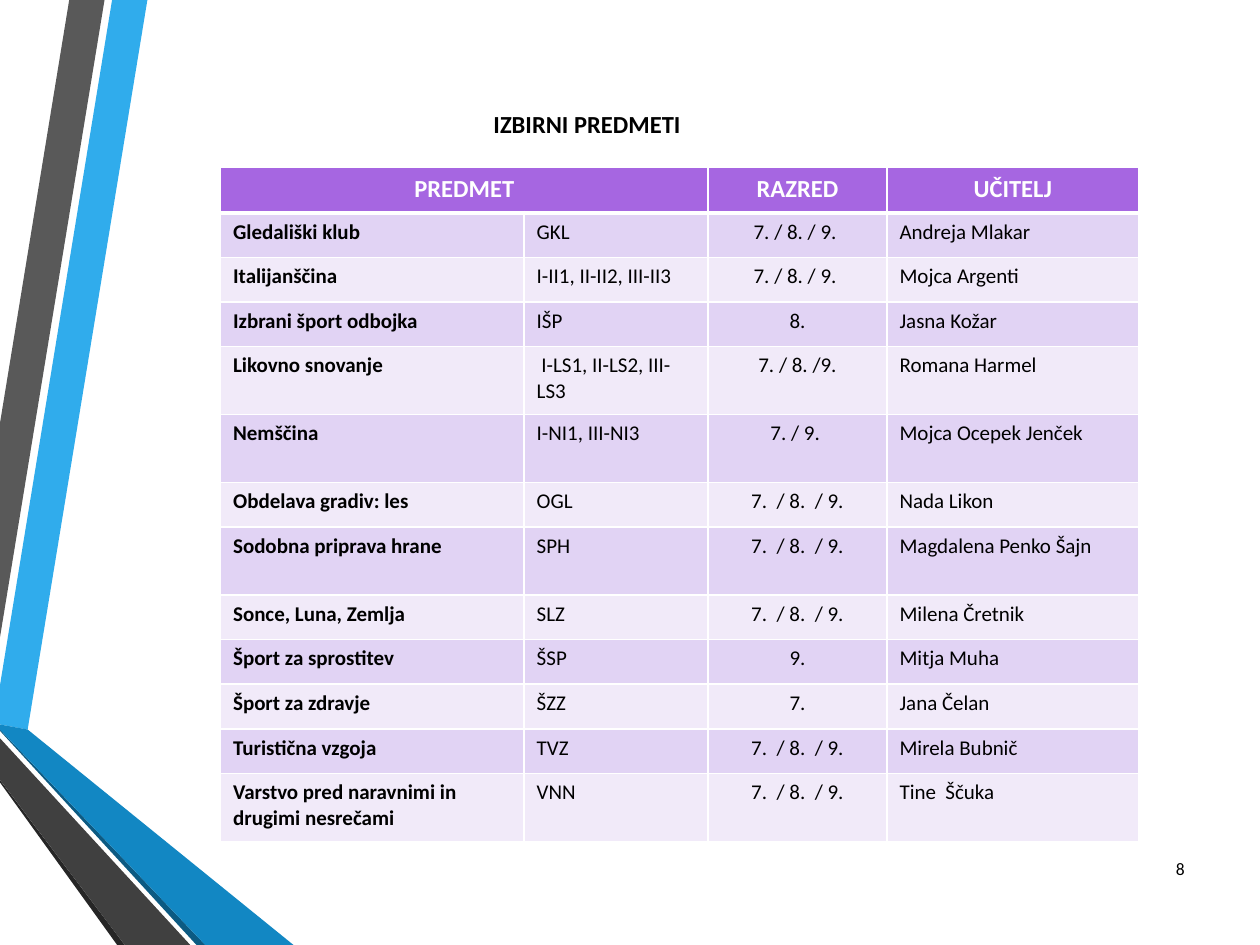
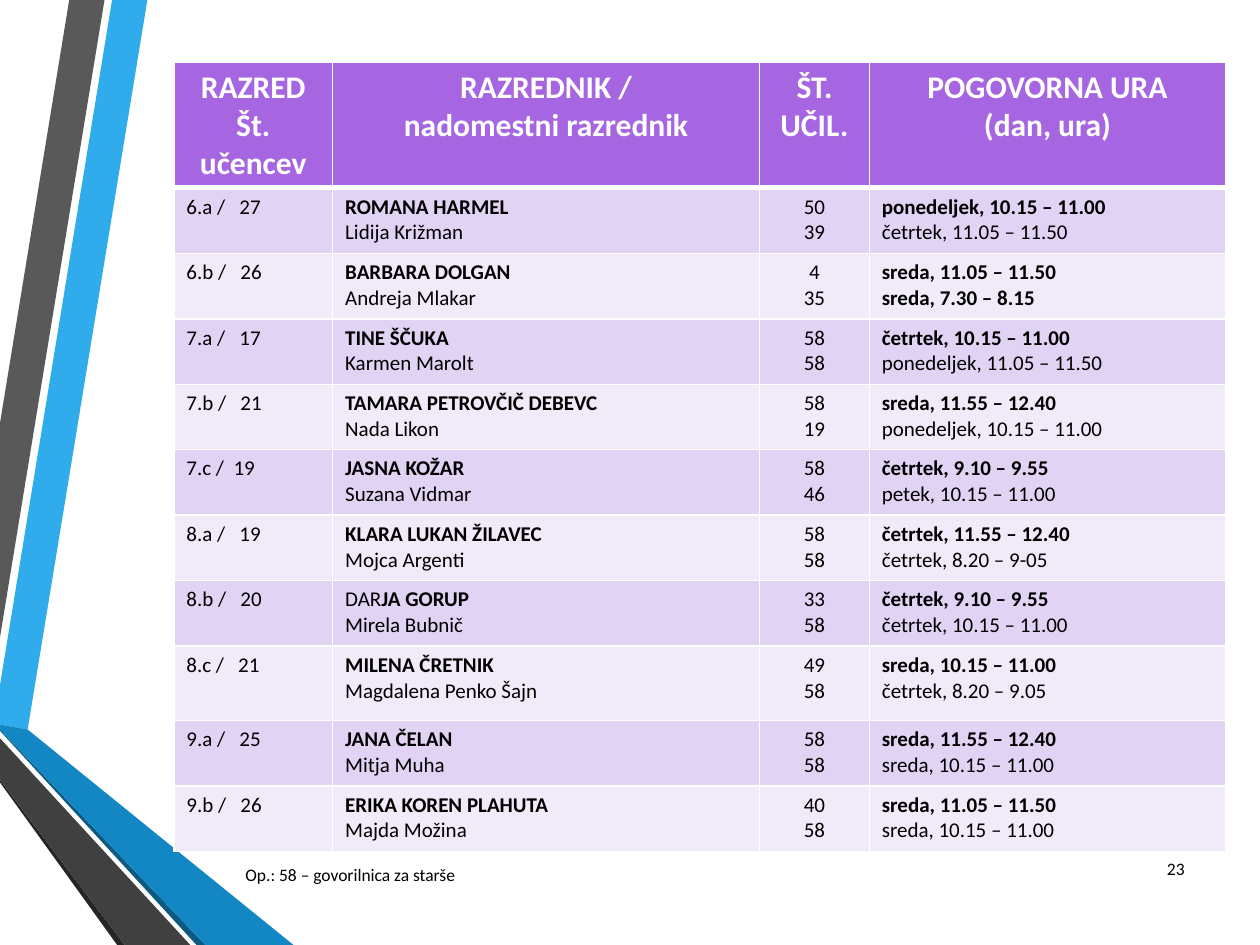
from lxml import etree
from pptx import Presentation
from pptx.dml.color import RGBColor
from pptx.enum.text import MSO_ANCHOR, PP_ALIGN
from pptx.oxml.ns import qn
from pptx.util import Inches, Pt

LEFT, CENTER, RIGHT, JUSTIFY = PP_ALIGN.LEFT, PP_ALIGN.CENTER, PP_ALIGN.RIGHT, PP_ALIGN.JUSTIFY
TOP, MIDDLE = MSO_ANCHOR.TOP, MSO_ANCHOR.MIDDLE

BLACK = RGBColor(0x00, 0x00, 0x00)
WHITE = RGBColor(0xFF, 0xFF, 0xFF)
PURPLE = RGBColor(0xA6, 0x66, 0xE1)
LILAC = RGBColor(0xE1, 0xD3, 0xF4)
PALE_LILAC = RGBColor(0xF1, 0xEA, 0xF9)
SKY = RGBColor(0x30, 0xAC, 0xEC)
BLUE = RGBColor(0x12, 0x87, 0xC3)
DEEP_BLUE = RGBColor(0x0C, 0x5A, 0x82)
GRAY = RGBColor(0x59, 0x59, 0x59)
DARK_GRAY = RGBColor(0x40, 0x40, 0x40)
CHARCOAL = RGBColor(0x26, 0x26, 0x26)

BANDS = [
    (SKY, [(0, 5.44), (0, 5.75), (0.22, 5.79), (1.17, 0), (0.89, 0)]),
    (GRAY, [(0.83, 0), (0.55, 0), (0, 3.36), (0, 5.06)]),
    (CHARCOAL, [(0, 6.19), (0, 6.21), (0.93, 7.5), (0.99, 7.5)]),
    (DEEP_BLUE, [(0, 5.79), (0, 5.8), (1.56, 7.5), (1.63, 7.5)]),
    (BLUE, [(0, 5.79), (1.63, 7.5), (2.33, 7.5), (0.22, 5.79), (0, 5.75)]),
    (DARK_GRAY, [(0, 6.19), (0.99, 7.5), (1.51, 7.5), (0, 5.86)]),
]

SUBJECTS = [
    ("PREDMET", "", "RAZRED", "UČITELJ"),
    ("*Gledališki klub*", "GKL", "7. / 8. / 9. ", "Andreja Mlakar"),
    ("*Italijanščina*", "I-II1, II-II2, III-II3", "7. / 8. / 9. ", "Mojca Argenti"),
    ("*Izbrani šport odbojka*", "IŠP", "8.", "Jasna Kožar"),
    ("*Likovno snovanje*", " I-LS1, II-LS2, III-LS3", "7. / 8. /9.", "Romana Harmel"),
    ("*Nemščina*", "I-NI1, III-NI3", "7. / 9. ", "Mojca Ocepek Jenček"),
    ("*Obdelava gradiv: les*", "OGL", "7.  / 8.  / 9.", "Nada Likon"),
    ("*Sodobna priprava hrane*", "SPH", "7.  / 8.  / 9.", "Magdalena Penko Šajn"),
    ("*Sonce, Luna, Zemlja*", "SLZ", "7.  / 8.  / 9.", "Milena Čretnik"),
    ("*Šport za sprostitev*", "ŠSP", "9.", "Mitja Muha"),
    ("*Šport za zdravje*", "ŠZZ", "7.", "Jana Čelan"),
    ("*Turistična vzgoja*", "TVZ", "7.  / 8.  / 9.", "Mirela Bubnič"),
    ("*Varstvo pred naravnimi in drugimi nesrečami*", "VNN", "7.  / 8.  / 9.", "Tine  Ščuka"),
]

OFFICE_HOURS = [
    ("RAZRED\nŠt. učencev", "RAZREDNIK /\nnadomestni razrednik", "ŠT. UČIL.",
     "POGOVORNA URA\n(dan, ura)"),
    ("6.a /   27", "*ROMANA HARMEL*\nLidija Križman", "50\n39",
     "*ponedeljek, 10.15 – 11.00*\nčetrtek, 11.05 – 11.50"),
    ("6.b /   26", "*BARBARA DOLGAN*\nAndreja Mlakar", "4\n35",
     "*sreda, 11.05 – 11.50*\n*sreda, 7.30 – 8.15*"),
    ("7.a /   17", "*TINE ŠČUKA*\nKarmen Marolt", "58\n58",
     "*četrtek, 10.15 – 11.00*\nponedeljek, 11.05 – 11.50"),
    ("7.b /   21", "*TAMARA PETROVČIČ DEBEVC*\nNada Likon", "58\n19",
     "*sreda, 11.55 – 12.40*\nponedeljek, 10.15 – 11.00"),
    ("7.c /  19", "*JASNA KOŽAR*\nSuzana Vidmar", "58\n46",
     "*četrtek, 9.10 – 9.55*\npetek, 10.15 – 11.00"),
    ("8.a /   19", "*KLARA LUKAN ŽILAVEC*\nMojca Argenti", "58\n58",
     "*četrtek, 11.55 – 12.40*\nčetrtek, 8.20 – 9-05"),
    ("8.b /   20", "DAR*JA GORUP*\nMirela Bubnič", "33\n58",
     "*četrtek, 9.10 – 9.55*\nčetrtek, 10.15 – 11.00"),
    ("8.c /   21", "*MILENA ČRETNIK*\nMagdalena Penko Šajn", "49\n58",
     "*sreda, 10.15 – 11.00*\nčetrtek, 8.20 – 9.05"),
    ("9.a /   25", "*JANA ČELAN*\nMitja Muha", "58\n58",
     "*sreda, 11.55 – 12.40*\nsreda, 10.15 – 11.00"),
    ("9.b /   26", "*ERIKA KOREN PLAHUTA*\nMajda Možina", "40\n58",
     "*sreda, 11.05 – 11.50*\nsreda, 10.15 – 11.00"),
]


class SchoolDeck:
    font_name = "Calibri"
    title_only, blank = 5, 6

    def __init__(self):
        self.deck = Presentation()
        self.deck.slide_width, self.deck.slide_height = Inches(10), Inches(7.5)
        self.page = None

    def add_page(self, layout):
        self.page = self.deck.slides.add_slide(self.deck.slide_layouts[layout])

    def add_master_bands(self):
        master_tree = self.deck.slide_master.shapes.element
        for number, (color, points) in enumerate(BANDS, 101):
            corners = [(Inches(x), Inches(y)) for x, y in points]
            builder = self.page.shapes.build_freeform(*corners[0])
            builder.add_line_segments(corners[1:], close=True)
            band = builder.convert_to_shape()
            band.shadow.inherit = False
            band.fill.solid()
            band.fill.fore_color.rgb = color
            band.line.fill.background()
            band.element.nvSpPr.cNvPr.set("id", str(number))
            master_tree.append(band.element)

    def fill_text(self, frame, text, size, color=BLACK, bold=False, **para_format):
        for index, line in enumerate(text.split("\n")):
            para = frame.add_paragraph() if index else frame.paragraphs[0]
            for name, value in para_format.items():
                setattr(para, name, value)
            for position, part in enumerate(line.split("*")):
                if part:
                    span = para.add_run()
                    span.text = part
                    span_format = {"name": self.font_name, "size": Pt(size),
                                   "bold": bold or position % 2 == 1}
                    for name, value in span_format.items():
                        setattr(span.font, name, value)
                    span.font.color.rgb = color

    def add_text(self, box, area, text, size, anchor=TOP, **text_format):
        for name, value in zip(("left", "top", "width", "height"), area):
            setattr(box, name, Inches(value))
        frame_format = {"word_wrap": True, "vertical_anchor": anchor}
        for name, value in frame_format.items():
            setattr(box.text_frame, name, value)
        self.fill_text(box.text_frame, text, size, **text_format)

    def add_title(self, area, text):
        self.add_text(self.page.shapes.title, area, text, 14, bold=True,
                      alignment=CENTER, line_spacing=0.9)

    def add_note(self, area, text, **text_format):
        box = self.page.shapes.add_textbox(0, 0, 0, 0)
        self.add_text(box, area, text, 10, **text_format)

    def add_page_number(self, number):
        self.add_note((9.05, 6.69, 0.45, 0.4), str(number), anchor=MIDDLE, alignment=RIGHT)

    def set_borders(self, cell, top, bottom):
        properties = cell._tc.get_or_add_tcPr()
        widths = {"a:lnL": 1, "a:lnR": 1, "a:lnT": top, "a:lnB": bottom}
        for index, (tag, width) in enumerate(widths.items()):
            line = etree.Element(qn(tag), w=str(Pt(width)))
            fill = etree.SubElement(line, qn("a:solidFill"))
            etree.SubElement(fill, qn("a:srgbClr"), val=str(WHITE))
            properties.insert(index, line)

    def add_table(self, area, columns, special_rows, rows, header_size, merged=()):
        frame = self.page.shapes.add_table(len(rows), len(columns), *map(Inches, area))
        table = frame.table
        for column, width in zip(table.columns, columns):
            column.width = Inches(width)
        plain_height = (area[3] - sum(special_rows.values())) / (len(rows) - len(special_rows))
        for row_index, values in enumerate(rows):
            header = row_index == 0
            table.rows[row_index].height = Inches(special_rows.get(row_index, plain_height))
            for column_index, text in enumerate(values):
                cell = table.cell(row_index, column_index)
                cell.fill.solid()
                cell.fill.fore_color.rgb = PURPLE if header else LILAC if row_index % 2 else PALE_LILAC
                self.set_borders(cell, 3 if row_index == 1 else 1, 3 if header else 1)
                self.fill_text(cell.text_frame, text, header_size if header else 12,
                               WHITE if header else BLACK, header,
                               alignment=CENTER if header or column_index == 2 else LEFT)
        if merged:
            table.cell(0, merged[0]).merge(table.cell(0, merged[1]))


def main():
    school = SchoolDeck()

    school.add_page(school.title_only)
    school.add_master_bands()
    school.add_title((0.35, 0.84, 8.62, 0.44), "IZBIRNI PREDMETI")
    school.add_table((1.75, 1.33, 7.29, 5.35), (2.41, 1.46, 1.42, 2),
                     {0: 0.36, 4: 0.54, 5: 0.54, 7: 0.54, 12: 0.54},
                     SUBJECTS, 14, merged=(0, 1))
    school.add_page_number(8)

    school.add_page(school.blank)
    school.add_table((1.38, 0.49, 8.35, 6.27), (1.26, 3.39, 0.87, 2.83),
                     {0: 1, 8: 0.59}, OFFICE_HOURS, 18)
    school.add_note((1.85, 6.83, 2.44, 0.26), "Op.: 58 – govorilnica za starše",
                    alignment=JUSTIFY, line_spacing=0.9)
    school.add_page_number(23)

    school.deck.save("out.pptx")


if __name__ == "__main__":
    main()
